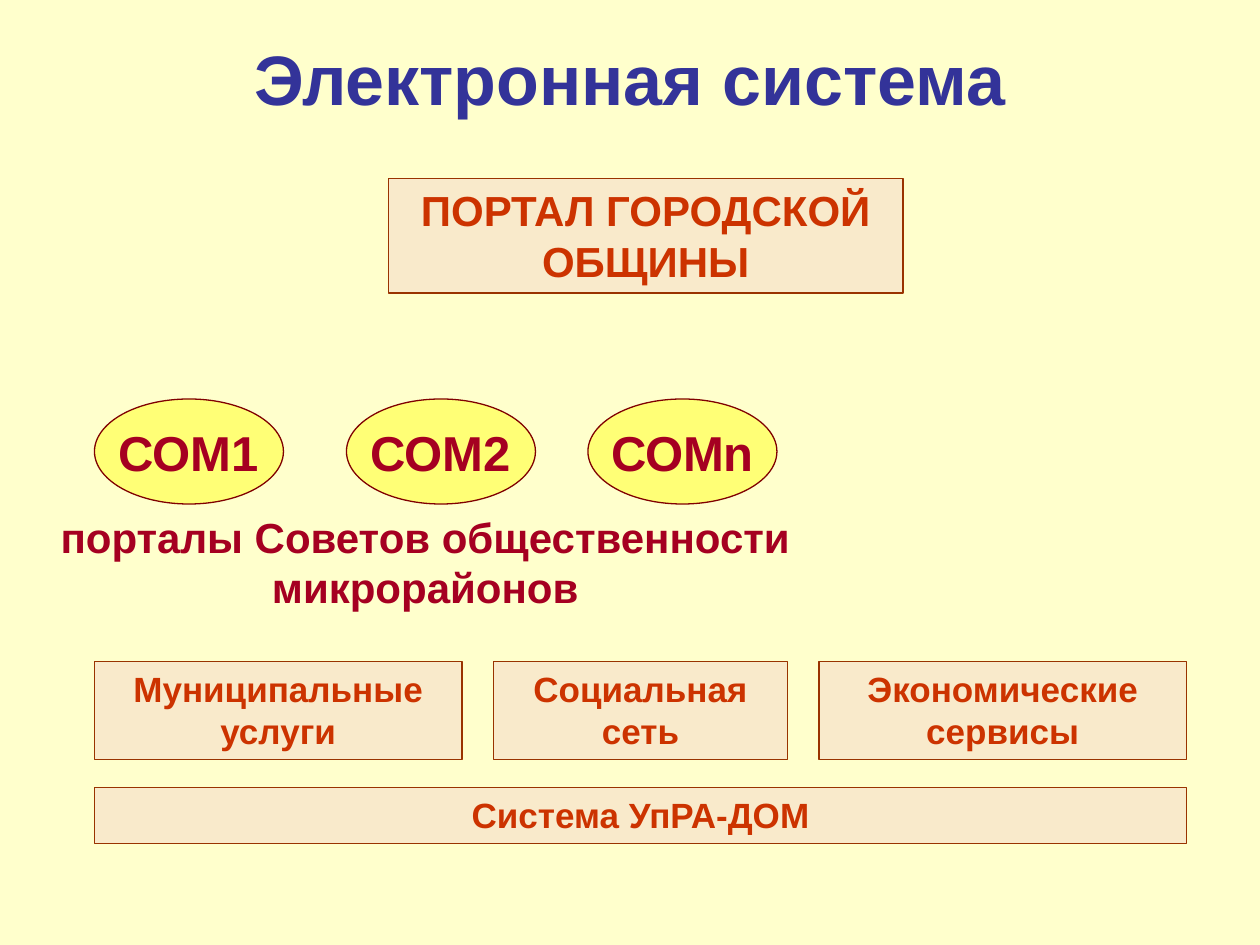
from lxml import etree
from pptx import Presentation
from pptx.dml.color import RGBColor
from pptx.enum.shapes import MSO_SHAPE
from pptx.enum.text import MSO_ANCHOR, PP_ALIGN
from pptx.oxml.ns import qn
from pptx.util import Pt

RECTANGLE, OVAL = MSO_SHAPE.RECTANGLE, MSO_SHAPE.OVAL
TOP, MIDDLE = MSO_ANCHOR.TOP, MSO_ANCHOR.MIDDLE
CENTER = PP_ALIGN.CENTER

FONT = "Arial"
COLORS = {
    "background": "FFFFCC",
    "title": "333399",
    "box": "F9EACB",
    "box_line": "993300",
    "box_text": "CC3300",
    "council": "FFFF00",
    "council_line": "800000",
    "council_text": "A50021",
}


def color(name):
    return RGBColor.from_string(COLORS[name])


def write(shape, text, size, color_name, anchor=TOP, wrap=True, before=0):
    """Put one centred bold paragraph into a shape."""
    frame = shape.text_frame
    frame.word_wrap = wrap
    frame.vertical_anchor = anchor
    paragraph = frame.paragraphs[0]
    paragraph.alignment = CENTER
    paragraph.space_before = Pt(before)
    run = paragraph.add_run()
    run.text = text
    run.font.name = FONT
    run.font.size = Pt(size)
    run.font.bold = True
    run.font.color.rgb = color(color_name)


def add_filled(slide, preset, box, kind):
    shape = slide.shapes.add_shape(preset, *map(Pt, box))
    shape.shadow.inherit = False
    shape.fill.solid()
    shape.fill.fore_color.rgb = color(kind)
    shape.line.color.rgb = color(kind + "_line")
    shape.line.width = Pt(0.75)
    return shape


def add_box(slide, box, text, size):
    shape = add_filled(slide, RECTANGLE, box, "box")
    write(shape, text, size, "box_text", before=size / 10)


def add_title(slide, box):
    title = slide.shapes.title
    title.left, title.top, title.width, title.height = map(Pt, box)
    write(title, "Электронная система", 40, "title", before=4)


def add_councils(slide, box):
    """Council ovals with their caption below."""
    left, top, width, height = box
    oval_width, oval_height = 108, 60
    ovals = (("СОМ1", 54), ("СОМ2", 198), ("СОМn", 336))
    for text, offset in ovals:
        oval_box = (left + offset, top, oval_width, oval_height)
        oval = add_filled(slide, OVAL, oval_box, "council")
        fill_color = oval.fill._xPr.find(qn("a:solidFill"))[0]
        etree.SubElement(fill_color, qn("a:alpha"), val="42000")
        write(oval, text, 28, "council_text", MIDDLE, wrap=False)

    caption_top = top + oval_height + 0.75
    caption_height = top + height - caption_top
    caption = slide.shapes.add_textbox(
        Pt(left), Pt(caption_top), Pt(width), Pt(caption_height))
    write(caption, "порталы Советов общественности микрорайонов",
          24, "council_text", MIDDLE)


def add_services(slide, box):
    """Row of services standing on the common system."""
    left, top, width, height = box
    gap, row_height, base_height = 18, 56, 32
    services = (("Муниципальные услуги", 210), ("Социальная сеть", 168),
                ("Экономические сервисы", 210))
    x = left
    for text, service_width in services:
        add_box(slide, (x, top, service_width, row_height), text, 20)
        x += service_width + gap
    base_box = (left, top + height - base_height, width, base_height)
    add_box(slide, base_box, "Система УпРА-ДОМ", 20)


def main():
    presentation = Presentation()
    presentation.slide_width, presentation.slide_height = Pt(720), Pt(540)
    slide = presentation.slides.add_slide(presentation.slide_layouts[5])
    slide.background.fill.solid()
    slide.background.fill.fore_color.rgb = color("background")

    add_title(slide, (0, 16.5, 720, 55.5))
    add_box(slide, (222, 102, 294, 65.5), "ПОРТАЛ ГОРОДСКОЙ ОБЩИНЫ", 24)
    add_councils(slide, (0, 228, 486, 125.5))
    add_services(slide, (54, 378, 624, 104))
    presentation.save("out.pptx")


if __name__ == "__main__":
    main()
